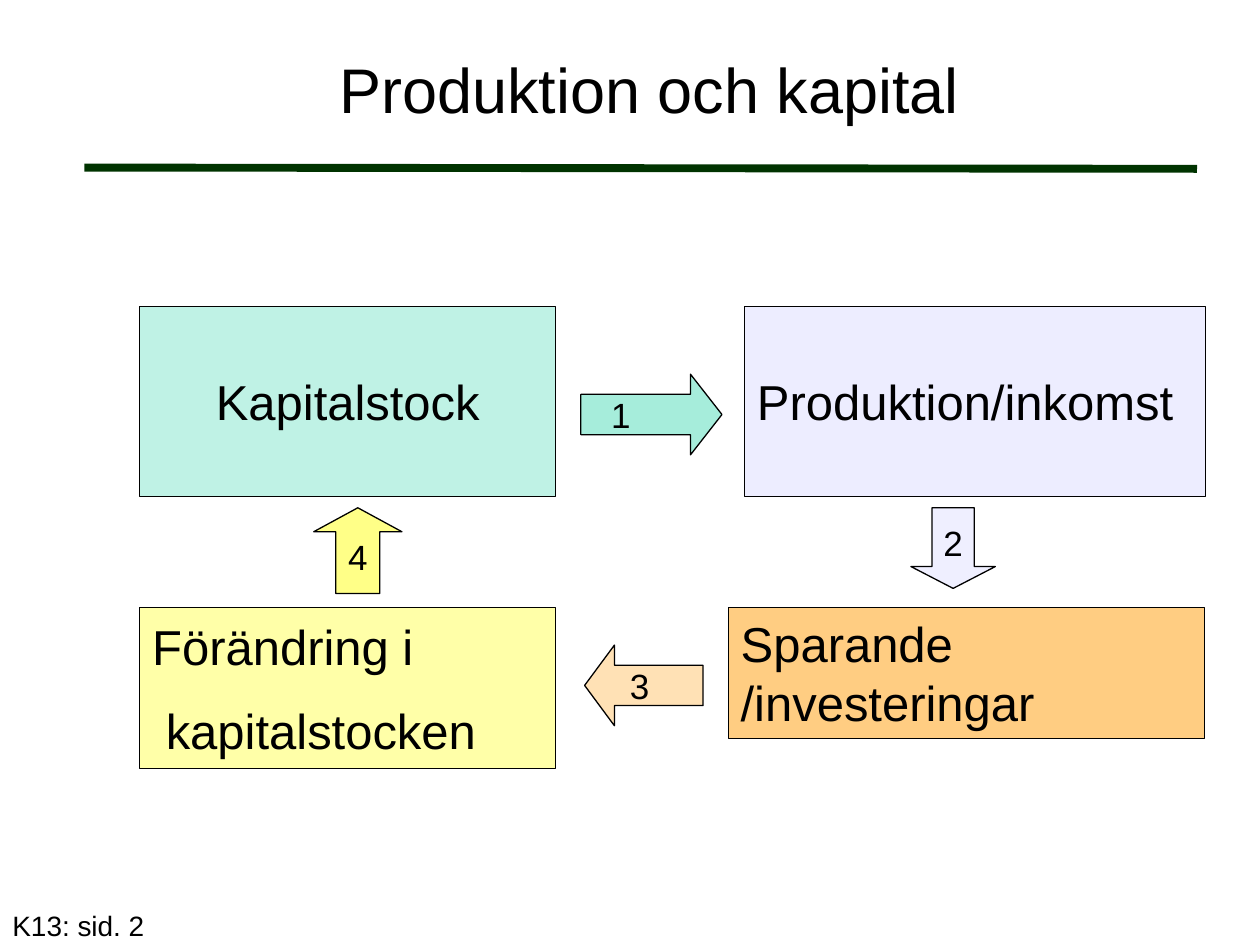
from lxml import etree
from pptx import Presentation
from pptx.dml.color import RGBColor
from pptx.enum.shapes import MSO_CONNECTOR, MSO_SHAPE
from pptx.enum.text import MSO_ANCHOR, PP_ALIGN
from pptx.oxml.ns import qn
from pptx.util import Inches, Pt

BLACK = "000000"
TEAL, LILAC, ORANGE, YELLOW = "00CC99", "CCCCFF", "FF9900", "FFFF00"
LEFT, CENTER = PP_ALIGN.LEFT, PP_ALIGN.CENTER

TITLE = " Produktion och kapital"
FOOTER = "K13: sid. 2"

# paragraphs, (left, top, width, height), colour, opacity %, alignment
BOXES = [
    (["Kapitalstock"], (1.11, 2.43, 3.3, 1.51), TEAL, 25, CENTER),
    (["Produktion/inkomst"], (5.91, 2.43, 3.66, 1.51), LILAC, 35, LEFT),
    (["Sparande\v/investeringar"], (5.78, 4.82, 3.78, 1.04), ORANGE, 49, LEFT),
    (["Förändring i", " kapitalstocken"], (1.11, 4.82, 3.3, 1.28), YELLOW, 34, LEFT),
]

# label, shape, (left, top, width, height), head length, colour, opacity %
ARROWS = [
    ("1", MSO_SHAPE.RIGHT_ARROW, (4.61, 2.97, 1.12, 0.64), 0.39, TEAL, 35),
    ("2", MSO_SHAPE.DOWN_ARROW, (7.23, 4.03, 0.67, 0.64), 0.27, LILAC, 31),
    ("3", MSO_SHAPE.LEFT_ARROW, (4.64, 5.12, 0.94, 0.64), 0.37, ORANGE, 29),
    ("4", MSO_SHAPE.UP_ARROW, (2.49, 4.03, 0.7, 0.68), 0.28, YELLOW, 47),
]
SIDEWAYS = (MSO_SHAPE.RIGHT_ARROW, MSO_SHAPE.LEFT_ARROW)


def rgb(color):
    return RGBColor.from_string(color)


def write(sp, *paragraphs, size, align=LEFT, anchor=MSO_ANCHOR.MIDDLE,
          insets=(0.1, 0.05, 0.1, 0.05), gap=0):
    """Fill a shape with paragraphs; gap is the space between them in points."""
    tf = sp.text_frame
    tf.word_wrap = True
    tf.vertical_anchor = anchor
    tf.margin_left, tf.margin_top, tf.margin_right, tf.margin_bottom = map(Inches, insets)
    for i, text in enumerate(paragraphs):
        p = tf.add_paragraph() if i else tf.paragraphs[0]
        p.text = text
        p.alignment = align
        p.space_before = Pt(gap if i else 0)
        for r in p.runs:
            r.font.name = "Arial"
            r.font.size = Pt(size)
            r.font.color.rgb = rgb(BLACK)


def add_tinted(s, kind, place, color, opacity):
    """Add a thinly outlined shape with a translucent fill."""
    sp = s.shapes.add_shape(kind, *map(Inches, place))
    sp.shadow.inherit = False
    sp.fill.solid()
    sp.fill.fore_color.rgb = rgb(color)
    clr = next(sp.fill._xPr.iter(qn("a:srgbClr")))
    etree.SubElement(clr, qn("a:alpha")).set("val", str(opacity * 1000))
    sp.line.color.rgb = rgb(BLACK)
    sp.line.width = Pt(0.75)
    return sp


def main():
    prs = Presentation()
    prs.slide_width, prs.slide_height = Inches(10), Inches(7.5)
    s = prs.slides.add_slide(prs.slide_layouts[5])

    title = s.shapes.title
    title.left, title.top, title.width, title.height = map(Inches, (0.67, 0.08, 8.83, 1.24))
    write(title, TITLE, size=36, align=CENTER)

    rule = s.shapes.add_connector(MSO_CONNECTOR.STRAIGHT, *map(Inches, (0.67, 1.33, 9.5, 1.34)))
    rule.line.color.rgb = rgb("003300")
    rule.line.width = Pt(4.5)
    etree.SubElement(rule._element.spPr, qn("a:effectLst"))

    for paragraphs, place, color, opacity, align in BOXES:
        sp = add_tinted(s, MSO_SHAPE.RECTANGLE, place, color, opacity)
        write(sp, *paragraphs, size=28, align=align, gap=14)

    for label, kind, place, head, color, opacity in ARROWS:
        sp = add_tinted(s, kind, place, color, opacity)
        sp.adjustments[0], sp.adjustments[1] = 0.5, head
        if kind in SIDEWAYS:
            write(sp, label, size=20, insets=(0.24, 0, 0, 0))
        else:
            write(sp, label, size=20, align=CENTER, insets=(0, 0, 0, 0))

    footer = s.shapes.add_textbox(*map(Inches, (0, 7.16, 2.08, 0.37)))
    write(footer, FOOTER, size=16, anchor=MSO_ANCHOR.TOP)

    prs.save("out.pptx")


if __name__ == "__main__":
    main()
